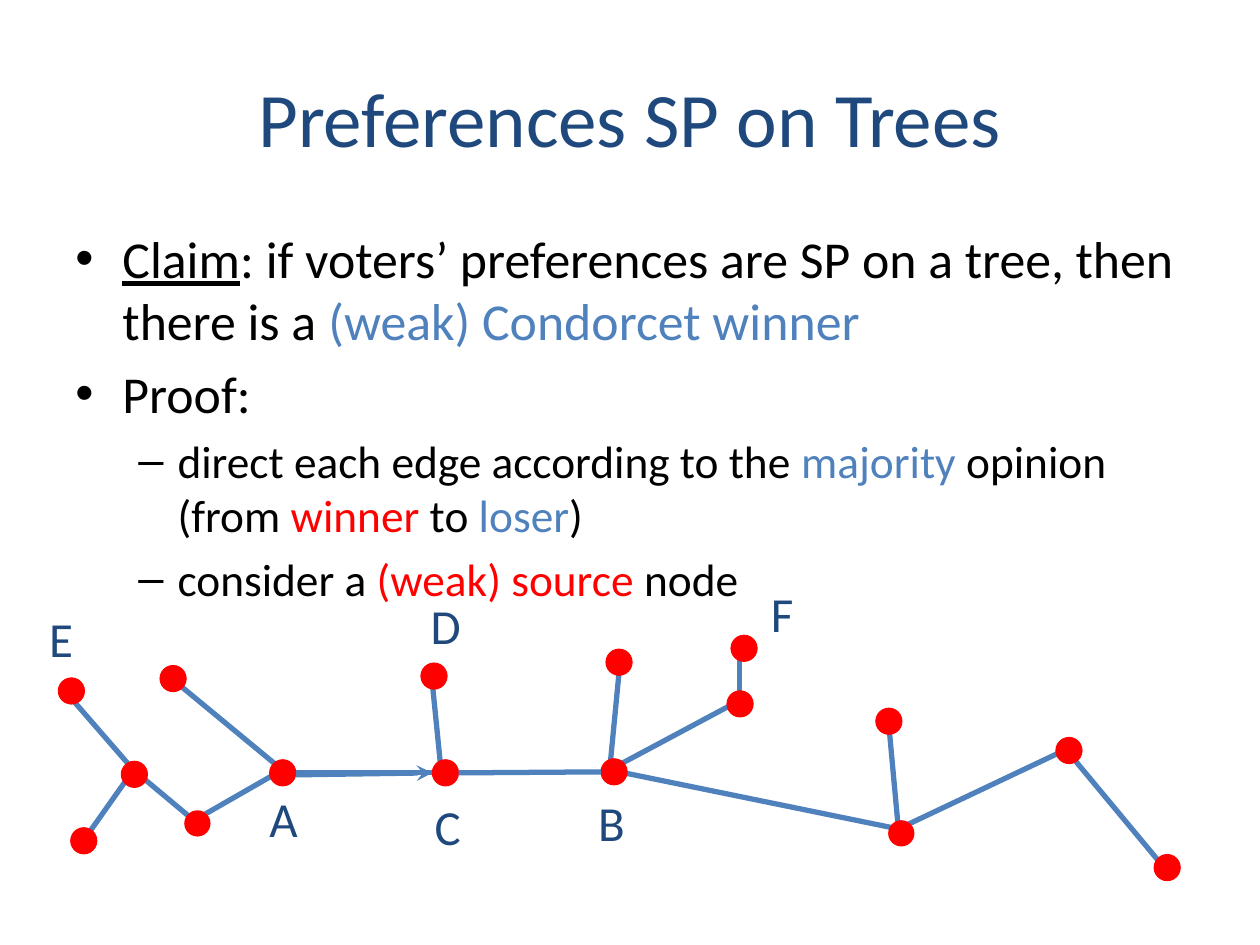
"""Build the slide on single-peaked preferences over trees."""
from dataclasses import dataclass
from typing import NamedTuple

from lxml.etree import SubElement
from pptx import Presentation
from pptx.dml.color import RGBColor
from pptx.enum.shapes import MSO_CONNECTOR, MSO_SHAPE
from pptx.enum.text import MSO_ANCHOR, MSO_AUTO_SIZE, PP_ALIGN
from pptx.oxml.ns import qn
from pptx.util import Cm, Pt


@dataclass(frozen=True)
class Theme:
    font: str = "Calibri"
    heading: str = "1F497D"
    accent: str = "4F81BD"
    alert: str = "FF0000"
    text: str = "000000"
    title_size: float = 44
    label_size: float = 28
    level_sizes: tuple[float, ...] = (29.6, 25.9)
    edge_width: float = 3
    outline_width: float = 0.5
    node_diameter: float = 0.53


class Point(NamedTuple):
    x: float
    y: float


class Node(NamedTuple):
    centre: Point
    joint: Point
    outlined: bool = True


class Label(NamedTuple):
    text: str
    left: float
    top: float
    width: float


class Span(NamedTuple):
    text: str
    color: str
    underline: bool = False


class Level(NamedTuple):
    bullet: str
    margin: float
    hanging: float


class Item(NamedTuple):
    level: int
    spans: tuple[Span, ...]


THEME = Theme()
LEVELS = (Level("•", 0.95, 0.95), Level("–", 2.06, 0.79))

ITEMS = (
    Item(0, (
        Span("Claim", THEME.text, True),
        Span(": if voters’ preferences are SP on a tree, then there is a ", THEME.text),
        Span("(weak) Condorcet winner", THEME.accent),
    )),
    Item(0, (Span("Proof:", THEME.text),)),
    Item(1, (
        Span("direct each edge according to the ", THEME.text),
        Span("majority", THEME.accent),
        Span(" opinion (from ", THEME.text),
        Span("winner", THEME.alert),
        Span(" to ", THEME.text),
        Span("loser", THEME.accent),
        Span(")", THEME.text),
    )),
    Item(1, (
        Span("consider a ", THEME.text),
        Span("(weak) source ", THEME.alert),
        Span("node", THEME.text),
    )),
)

NODES = {
    "left low": Node(Point(3.98, 16.6), Point(3.91, 16.54), False),
    "right fork": Node(Point(18.17, 16.8), Point(18.11, 16.71), False),
    "C": Node(Point(8.98, 15.58), Point(8.89, 15.52)),
    "F": Node(Point(15, 13.07), Point(14.91, 13.13)),
    "above A": Node(Point(3.49, 13.68), Point(3.51, 13.72)),
    "D": Node(Point(8.75, 13.63), Point(8.71, 13.72)),
    "E": Node(Point(1.44, 13.93), Point(1.3, 13.92)),
    "left fork": Node(Point(2.71, 15.61), Point(2.69, 15.52)),
    "A": Node(Point(5.7, 15.58), Point(5.69, 15.52)),
    "left leaf": Node(Point(1.69, 16.95), Point(1.7, 16.92)),
    "above B": Node(Point(12.48, 13.35), Point(12.29 + 0.21, 13.34)),
    "B": Node(Point(12.38, 15.56), Point(12.29, 15.52)),
    "below F": Node(Point(14.92, 14.19), Point(14.91, 14.12)),
    "right top": Node(Point(17.92, 14.54), Point(17.91, 14.53)),
    "right peak": Node(Point(21.55, 15.13), Point(21.49, 15.11)),
    "right leaf": Node(Point(23.53, 17.49), Point(23.5, 17.53)),
}

EDGES = (
    ("above A", "A"), ("left low", "A"), ("left fork", "left low"),
    ("left leaf", "left fork"), ("E", "left fork"), ("D", "C"),
    ("B", "below F"), ("above B", "B"), ("B", "right fork"),
    ("right top", "right fork"), ("right fork", "right peak"),
    ("below F", "F"), ("right peak", "right leaf"),
)

LABELS = (
    Label("A", 5.18, 15.77, 1.09), Label("B", 11.81, 15.85, 1.07),
    Label("C", 8.51, 15.93, 1.04), Label("D", 8.43, 11.89, 1.12),
    Label("E", 0.74, 12.14, 0.99), Label("F", 15.29, 11.63, 0.97),
)


def add_span(para, text: str, *, size: float, color: str, underline: bool = False) -> None:
    span = para.add_run()
    span.text = text
    span.font.name = THEME.font
    span.font.size = Pt(size)
    span.font.color.rgb = RGBColor.from_string(color)
    if underline:
        span.font.underline = True


def add_title(page, text: str) -> None:
    box = page.shapes.title
    box.left, box.top, box.width, box.height = Cm(1.27), Cm(0.76), Cm(22.86), Cm(3.18)
    box.text_frame.vertical_anchor = MSO_ANCHOR.MIDDLE
    para = box.text_frame.paragraphs[0]
    para.alignment = PP_ALIGN.CENTER
    add_span(para, text, size=THEME.title_size, color=THEME.heading)


def add_body(page, items: tuple[Item, ...]) -> None:
    box = page.shapes.add_textbox(Cm(1.27), Cm(4.45), Cm(22.86), Cm(7.44))
    frame = box.text_frame
    frame.word_wrap = True
    for index, item in enumerate(items):
        para = frame.add_paragraph() if index else frame.paragraphs[0]
        level, size = LEVELS[item.level], THEME.level_sizes[item.level]
        para.level = item.level
        para.space_before = Pt(round(size * 0.2, 1))
        properties = para._p.get_or_add_pPr()
        properties.set("marL", str(Cm(level.margin)))
        properties.set("indent", str(-Cm(level.hanging)))
        SubElement(properties, qn("a:buFont"), typeface="Arial")
        SubElement(properties, qn("a:buChar"), char=level.bullet)
        for span in item.spans:
            add_span(para, span.text, size=size, color=span.color, underline=span.underline)


def add_edge(page, start: Point, end: Point, *, arrow: bool = False) -> None:
    edge = page.shapes.add_connector(
        MSO_CONNECTOR.STRAIGHT, Cm(start.x), Cm(start.y), Cm(end.x), Cm(end.y))
    edge.line.width = Pt(THEME.edge_width)
    edge.line.color.rgb = RGBColor.from_string(THEME.accent)
    if arrow:
        SubElement(edge.line._get_or_add_ln(), qn("a:tailEnd"), type="stealth")
    SubElement(edge._element.spPr, qn("a:effectLst"))


def add_node(page, node: Node) -> None:
    size = THEME.node_diameter
    dot = page.shapes.add_shape(
        MSO_SHAPE.OVAL, Cm(node.centre.x - size / 2), Cm(node.centre.y - size / 2),
        Cm(size), Cm(size))
    dot.shadow.inherit = False
    dot.fill.solid()
    dot.fill.fore_color.rgb = RGBColor.from_string(THEME.alert)
    if node.outlined:
        dot.line.width = Pt(THEME.outline_width)
        dot.line.color.rgb = RGBColor.from_string(THEME.alert)
    else:
        dot.line.fill.background()


def add_label(page, label: Label) -> None:
    box = page.shapes.add_textbox(Cm(label.left), Cm(label.top), Cm(label.width), Cm(1.45))
    box.text_frame.word_wrap = False
    box.text_frame.auto_size = MSO_AUTO_SIZE.SHAPE_TO_FIT_TEXT
    add_span(box.text_frame.paragraphs[0], label.text,
             size=THEME.label_size, color=THEME.heading)


def side(name: str, direction: int, drop: float = 0) -> Point:
    centre = NODES[name].centre
    return Point(centre.x + direction * THEME.node_diameter / 2, centre.y + drop)


def main() -> None:
    deck = Presentation()
    deck.slide_width, deck.slide_height = Cm(25.4), Cm(19.05)
    page = deck.slides.add_slide(deck.slide_layouts[5])
    add_title(page, "Preferences SP on Trees")
    add_body(page, ITEMS)
    add_edge(page, side("A", 1), side("C", -1))
    for start, end in EDGES:
        add_edge(page, NODES[start].joint, NODES[end].joint)
    for node in NODES.values():
        add_node(page, node)
    for label in LABELS:
        add_label(page, label)
    add_edge(page, side("C", 1), side("B", -1))
    add_edge(page, side("A", 1, 0.04), side("C", -1), arrow=True)
    deck.save("out.pptx")


if __name__ == "__main__":
    main()
